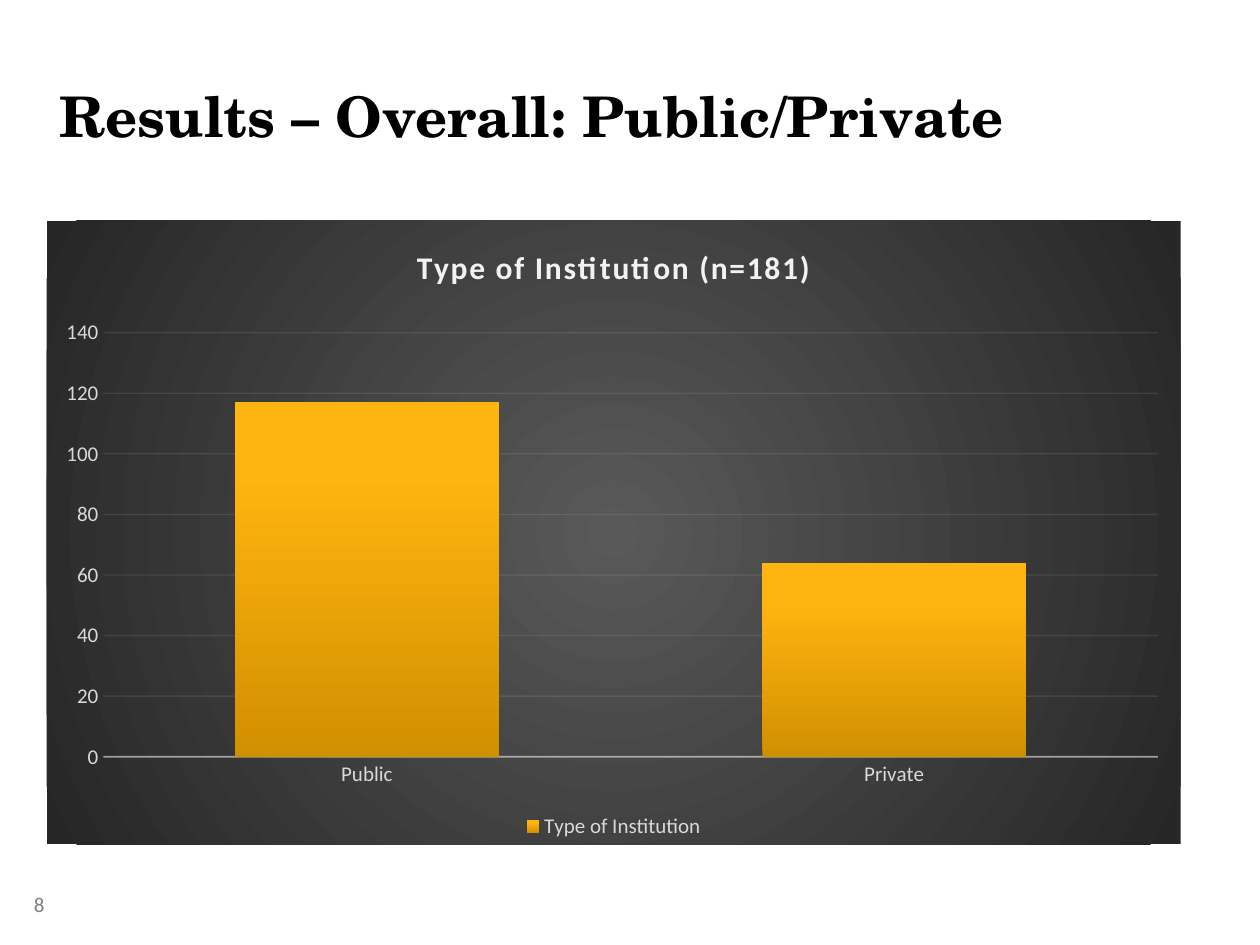
from lxml import etree
from pptx import Presentation
from pptx.chart.data import CategoryChartData
from pptx.dml.color import RGBColor
from pptx.enum import chart as ch, text
from pptx.oxml import parse_xml
from pptx.oxml.ns import nsdecls, qn
from pptx.util import Inches, Pt

# Content
TITLE = "Results – Overall: Public/Private"
PAGE_NUMBER = "8"
CHART_TITLE = "Type of Institution (n=181)"
SERIES = "Type of Institution"
COUNTS = {"Public": 117, "Private": 64}

COLORS = {
    "title": "000000", "number": "808080", "label": "D9D9D9", "light": "F2F2F2",
    "center": "595959", "edge": "262626",
    "bar_base": "D19000", "bar_mid": "FFB510", "bar_top": "FFB512",
}
PANEL_STOPS = [(0, "center"), (100, "edge")]
BAR_STOPS = [(0, "bar_base"), (80, "bar_mid"), (100, "bar_top")]
RADIAL = ('<a:path path="circle"><a:fillToRect l="50000" t="50000" '
          'r="50000" b="50000"/></a:path>')
UPWARD = '<a:lin ang="16200000" scaled="0"/>'
PLOT_AREA = {"x": 0.05, "y": 0.18, "w": 0.93, "h": 0.68}


def style_font(font, size, color, name="Calibri", bold=False):
    font.name, font.size, font.bold = name, Pt(size), bold
    font.color.rgb = RGBColor.from_string(COLORS[color])


def gradient_xml(stops, direction):
    marks = "".join(
        f'<a:gs pos="{pos * 1000}"><a:srgbClr val="{COLORS[color]}"/></a:gs>'
        for pos, color in stops)
    return f"<a:gradFill><a:gsLst>{marks}</a:gsLst>{direction}</a:gradFill>"


def style_line(line, width, color, opacity):
    line.width = Pt(width)
    line.color.rgb = RGBColor.from_string(COLORS[color])
    rgb = line._get_or_add_ln().find(".//" + qn("a:srgbClr"))
    etree.SubElement(rgb, qn("a:alpha")).set("val", str(opacity * 1000))


def add_title(page):
    title = page.shapes.title
    title.left, title.top = Inches(0.37), Inches(0.3)
    title.width, title.height = Inches(9.3), Inches(0.93)
    frame = title.text_frame
    frame.vertical_anchor = text.MSO_ANCHOR.BOTTOM
    para = frame.paragraphs[0]
    para.alignment = text.PP_ALIGN.LEFT
    span = para.add_run()
    span.text = TITLE
    style_font(span.font, 32, "title", "TeX Gyre Schola", True)


def add_page_number(page):
    box = page.shapes.add_textbox(Inches(0.17), Inches(7.03), Inches(0.92), Inches(0.55))
    box.text_frame.word_wrap = True
    span = box.text_frame.paragraphs[0].add_run()
    span.text = PAGE_NUMBER
    style_font(span.font, 12, "number")


def add_chart(page):
    data = CategoryChartData()
    data.categories = list(COUNTS)
    data.add_series(SERIES, list(COUNTS.values()))
    chart = page.shapes.add_chart(
        ch.XL_CHART_TYPE.COLUMN_CLUSTERED,
        Inches(0.37), Inches(1.75), Inches(9), Inches(4.95), data).chart
    style_font(chart.font, 10, "title")

    # Heading and legend
    chart.has_title = True
    span = chart.chart_title.text_frame.paragraphs[0].add_run()
    span.text = CHART_TITLE
    style_font(span.font, 18, "light", bold=True)
    span.font._element.set("spc", "100")
    chart.chart_title.include_in_layout = False
    chart.has_legend = True
    chart.legend.position = ch.XL_LEGEND_POSITION.BOTTOM
    chart.legend.include_in_layout = False
    style_font(chart.legend.font, 12, "label")

    # Axes
    for axis in (chart.category_axis, chart.value_axis):
        axis.major_tick_mark = axis.minor_tick_mark = ch.XL_TICK_MARK.NONE
        style_font(axis.tick_labels.font, 12, "label")
    style_line(chart.category_axis.format.line, 1, "light", 54)
    values = chart.value_axis
    values.minimum_scale, values.maximum_scale, values.major_unit = 0, 140, 20
    values.format.line.fill.background()
    style_line(values.major_gridlines.format.line, 0.75, "light", 10)

    # Columns
    plot = chart.plots[0]
    plot.gap_width, plot.overlap, plot.vary_by_categories = 100, -24, False
    bar_format = plot.series[0].get_or_add_spPr() if hasattr(
        plot.series[0], "get_or_add_spPr") else plot.series[0]._element.get_or_add_spPr()
    bar_format.insert(0, parse_xml(gradient_xml(BAR_STOPS, UPWARD).replace(
        "<a:gradFill>", f"<a:gradFill {nsdecls('a')}>", 1)))

    # Dark panel behind the chart, and the plot's place in it
    space = chart._chartSpace
    space.find(qn("c:chart")).addnext(parse_xml(
        f"<c:spPr {nsdecls('c', 'a')}>{gradient_xml(PANEL_STOPS, RADIAL)}"
        "<a:ln><a:noFill/></a:ln></c:spPr>"))
    area = space.find(".//" + qn("c:plotArea"))
    for old in area.findall(qn("c:layout")):
        area.remove(old)
    places = "".join(f'<c:{key} val="{value}"/>' for key, value in PLOT_AREA.items())
    area.insert(0, parse_xml(
        f'<c:layout {nsdecls("c")}><c:manualLayout><c:layoutTarget val="inner"/>'
        f'<c:xMode val="edge"/><c:yMode val="edge"/>{places}'
        "</c:manualLayout></c:layout>"))


def main():
    deck = Presentation()
    deck.slide_width, deck.slide_height = Inches(10), Inches(7.5)
    page = deck.slides.add_slide(deck.slide_layouts[5])
    add_title(page)
    add_chart(page)
    add_page_number(page)
    deck.save("out.pptx")


if __name__ == "__main__":
    main()
